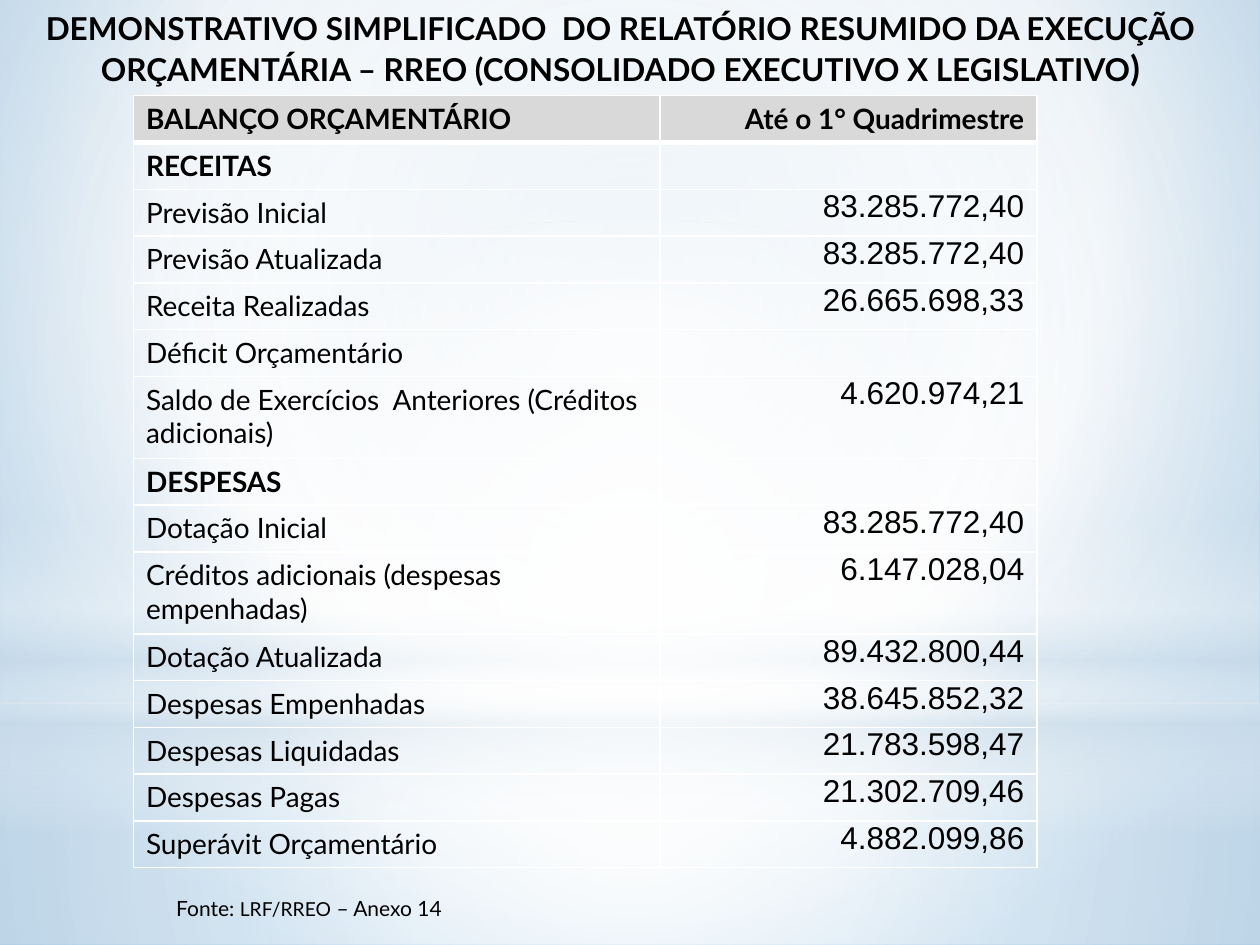
from lxml.etree import SubElement
from pptx import Presentation
from pptx.dml.color import RGBColor
from pptx.enum.shapes import MSO_SHAPE as Shape
from pptx.enum.text import MSO_ANCHOR as Anchor, PP_ALIGN as Align
from pptx.oxml.ns import qn
from pptx.util import Inches, Pt

WIDTH, HEIGHT = 10, 7.5
HORIZON = 5.58
FONT = "Lato"
BLACK, WHITE, MIST, HEADER_GRAY = "000000", "FFFFFF", "CCDDEA", "D9D9D9"
CENTER = (50, 50, 50, 50)

SKY = [(0, "BCD5E8", 100), (60, WHITE, 100), (100, "82B6DE", 100)]
BACKDROPS = [
    (Shape.RECTANGLE, HORIZON, HEIGHT - HORIZON,
     [(0, WHITE, 91), (37, WHITE, 76), (100, MIST, 79)], CENTER),
    (Shape.RECTANGLE, 0, HORIZON,
     [(0, WHITE, 89), (48, WHITE, 62), (100, MIST, 79)], CENTER),
    (Shape.RECTANGLE, 4.12, HEIGHT / 3,
     [(0, WHITE, 0), (29, WHITE, 30), (45, MIST, 40), (55, WHITE, 26),
      (65, MIST, 60), (100, WHITE, 0)], None),
    (Shape.OVAL, 1.75, HORIZON, [(0, WHITE, 100), (56, WHITE, 0)], CENTER),
]

TITLE = [
    ("DEMONSTRATIVO SIMPLIFICADO  DO RELATÓRIO RESUMIDO DA EXECUÇÃO "
     "ORÇAMENTÁRIA – RREO (CONSOLIDADO EXECUTIVO X LEGISLATIVO", None),
    (")", 20),
]
SOURCE = [("Fonte: ", None), ("LRF/RREO", 11), (" – Anexo 14", None)]

HEADINGS = ("BALANÇO ORÇAMENTÁRIO", "RECEITAS", "DESPESAS")
BALANCE = [
    ("BALANÇO ORÇAMENTÁRIO", "Até o 1° Quadrimestre"),
    ("RECEITAS", ""),
    ("Previsão Inicial", "83.285.772,40"),
    ("Previsão Atualizada", "83.285.772,40"),
    ("Receita Realizadas", "26.665.698,33"),
    ("Déficit Orçamentário", ""),
    ("Saldo de Exercícios  Anteriores (Créditos adicionais)", "4.620.974,21"),
    ("DESPESAS", ""),
    ("Dotação Inicial", "83.285.772,40"),
    ("Créditos adicionais (despesas empenhadas)", "6.147.028,04"),
    ("Dotação Atualizada", "89.432.800,44"),
    ("Despesas Empenhadas", "38.645.852,32"),
    ("Despesas Liquidadas", "21.783.598,47"),
    ("Despesas Pagas", "21.302.709,46"),
    ("Superávit Orçamentário", "4.882.099,86"),
]
TABLE_BOX = (1.06, 0.76, 7.17, 6.13)
LABEL_WIDTH = 4.18
TALL_ROW = 0.65
TALL_LABEL_LENGTH = 40


def color(hex_code):
    return RGBColor.from_string(hex_code)


def place(box):
    return [Inches(length) for length in box]


def style(paragraph, size, bold=False, align=Align.LEFT, font=FONT):
    paragraph.alignment = align
    paragraph.font.name = font
    paragraph.font.size = Pt(size)
    paragraph.font.bold = bold
    paragraph.font.color.rgb = color(BLACK)


def apply_gradient(properties, stops, focus):
    gradient = properties.makeelement(qn("a:gradFill"), {"rotWithShape": "1"})
    stop_list = SubElement(gradient, qn("a:gsLst"))
    for position, hex_code, opacity in stops:
        stop = SubElement(stop_list, qn("a:gs"), pos=str(position * 1000))
        tint = SubElement(stop, qn("a:srgbClr"), val=hex_code)
        if opacity < 100:
            SubElement(tint, qn("a:alpha"), val=str(opacity * 1000))
    if focus:
        radial = SubElement(gradient, qn("a:path"), {"path": "circle"})
        edges = {side: str(share * 1000) for side, share in zip("ltrb", focus)}
        SubElement(radial, qn("a:fillToRect"), edges)
    else:
        SubElement(gradient, qn("a:lin"), ang=str(90 * 60000), scaled="0")
    properties.replace(properties.find(qn("a:solidFill")), gradient)


def paint_background(slide):
    slide.background.fill.solid()
    properties = slide.element.find(".//" + qn("p:bgPr"))
    apply_gradient(properties, SKY, (20, 10, 20, 60))


def add_backdrop(slide, preset, top, height, stops, focus):
    backdrop = slide.shapes.add_shape(preset, *place((0, top, WIDTH, height)))
    backdrop.shadow.inherit = False
    backdrop.line.fill.background()
    backdrop.fill.solid()
    apply_gradient(backdrop.element.spPr, stops, focus)


def write_runs(frame, runs, size, bold=False, align=Align.LEFT):
    frame.word_wrap = True
    frame.vertical_anchor = Anchor.TOP
    paragraph = frame.paragraphs[0]
    style(paragraph, size, bold, align)
    for wording, own_size in runs:
        run = paragraph.add_run()
        run.text = wording
        if own_size:
            run.font.size = Pt(own_size)


def add_title(slide):
    title = slide.shapes.title
    title.left, title.top, title.width, title.height = place((0.2, 0.02, 9.45, 0.74))
    write_runs(title.text_frame, TITLE, 18, True, Align.CENTER)
    slide.shapes.element.append(title.element)


def add_source(slide):
    source = slide.shapes.add_textbox(*place((1.3, 7.06, 3.78, 0.3)))
    write_runs(source.text_frame, SOURCE, 12)


def set_borders(cell, bottom):
    properties = cell._tc.get_or_add_tcPr()
    widths = {"L": 1, "R": 1, "T": 1, "B": bottom}
    for index, (side, width) in enumerate(widths.items()):
        border = properties.makeelement(qn(f"a:ln{side}"), {"w": str(Pt(width))})
        fill = SubElement(border, qn("a:solidFill"))
        SubElement(fill, qn("a:srgbClr"), val=WHITE)
        properties.insert(index, border)


def fill_cell(cell, wording, is_header, is_value):
    cell.text = wording
    paragraph = cell.text_frame.paragraphs[0]
    if is_value and not is_header:
        cell.margin_left = cell.margin_top = cell.margin_bottom = 0
        style(paragraph, 18, align=Align.RIGHT, font="Arial")
    else:
        bold = is_header or wording in HEADINGS
        style(paragraph, 16, bold, Align.RIGHT if is_value else Align.LEFT)
    if is_header:
        cell.fill.solid()
        cell.fill.fore_color.rgb = color(HEADER_GRAY)
    else:
        cell.fill.background()
    set_borders(cell, 3 if is_header else 1)


def add_balance(slide):
    table = slide.shapes.add_table(len(BALANCE), 2, *place(TABLE_BOX)).table
    table.first_row = table.horz_banding = False
    table.columns[0].width = Inches(LABEL_WIDTH)
    table.columns[1].width = Inches(TABLE_BOX[2] - LABEL_WIDTH)
    tall = [len(label) >= TALL_LABEL_LENGTH for label, _ in BALANCE]
    short_row = (TABLE_BOX[3] - sum(tall) * TALL_ROW) / tall.count(False)
    for index, entry in enumerate(BALANCE):
        table.rows[index].height = Inches(TALL_ROW if tall[index] else short_row)
        for column, wording in enumerate(entry):
            fill_cell(table.cell(index, column), wording, index == 0, column == 1)


def main():
    presentation = Presentation()
    presentation.slide_width = Inches(WIDTH)
    presentation.slide_height = Inches(HEIGHT)
    slide = presentation.slides.add_slide(presentation.slide_layouts[5])
    paint_background(slide)
    for backdrop in BACKDROPS:
        add_backdrop(slide, *backdrop)
    add_balance(slide)
    add_title(slide)
    add_source(slide)
    presentation.save("out.pptx")


if __name__ == "__main__":
    main()
